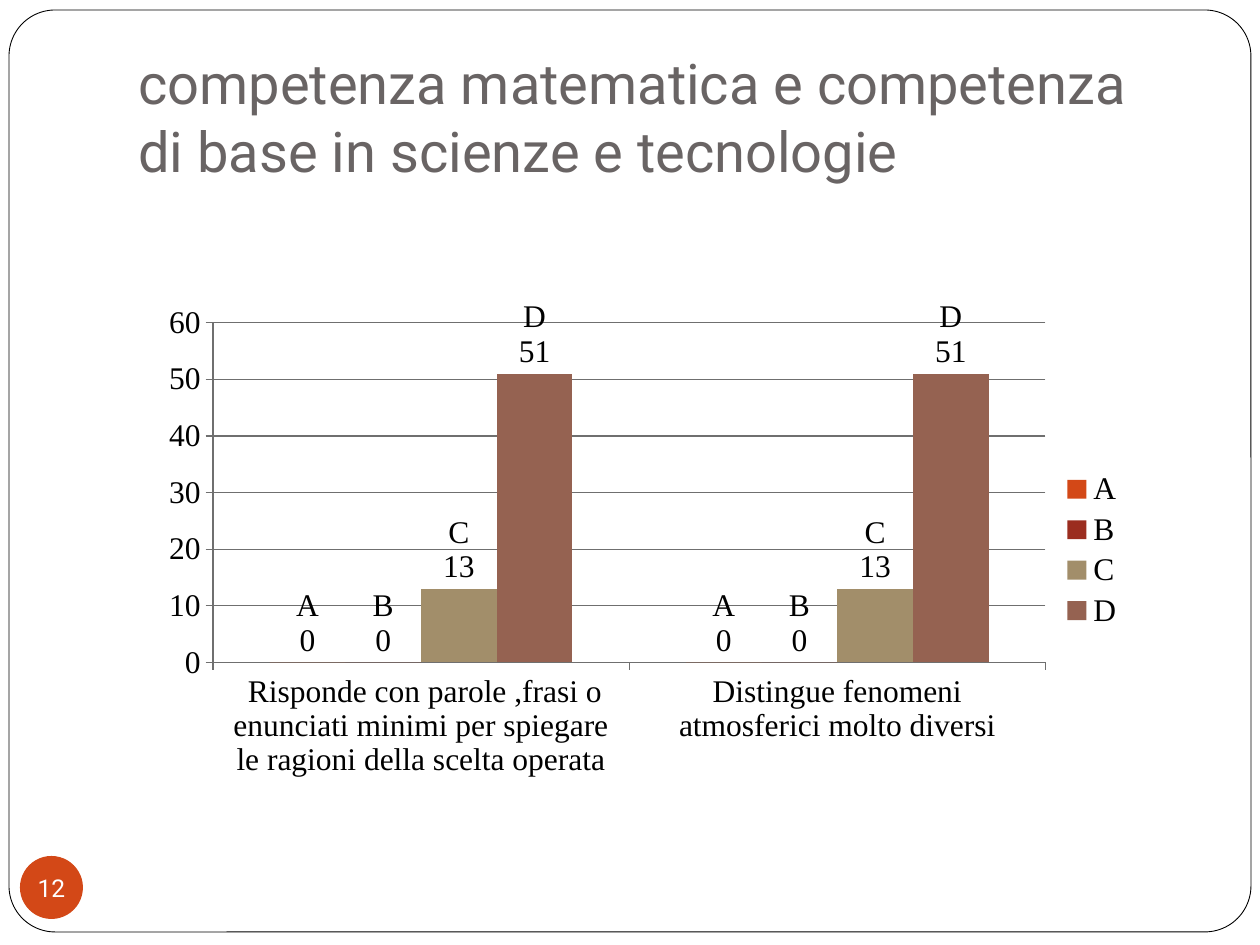
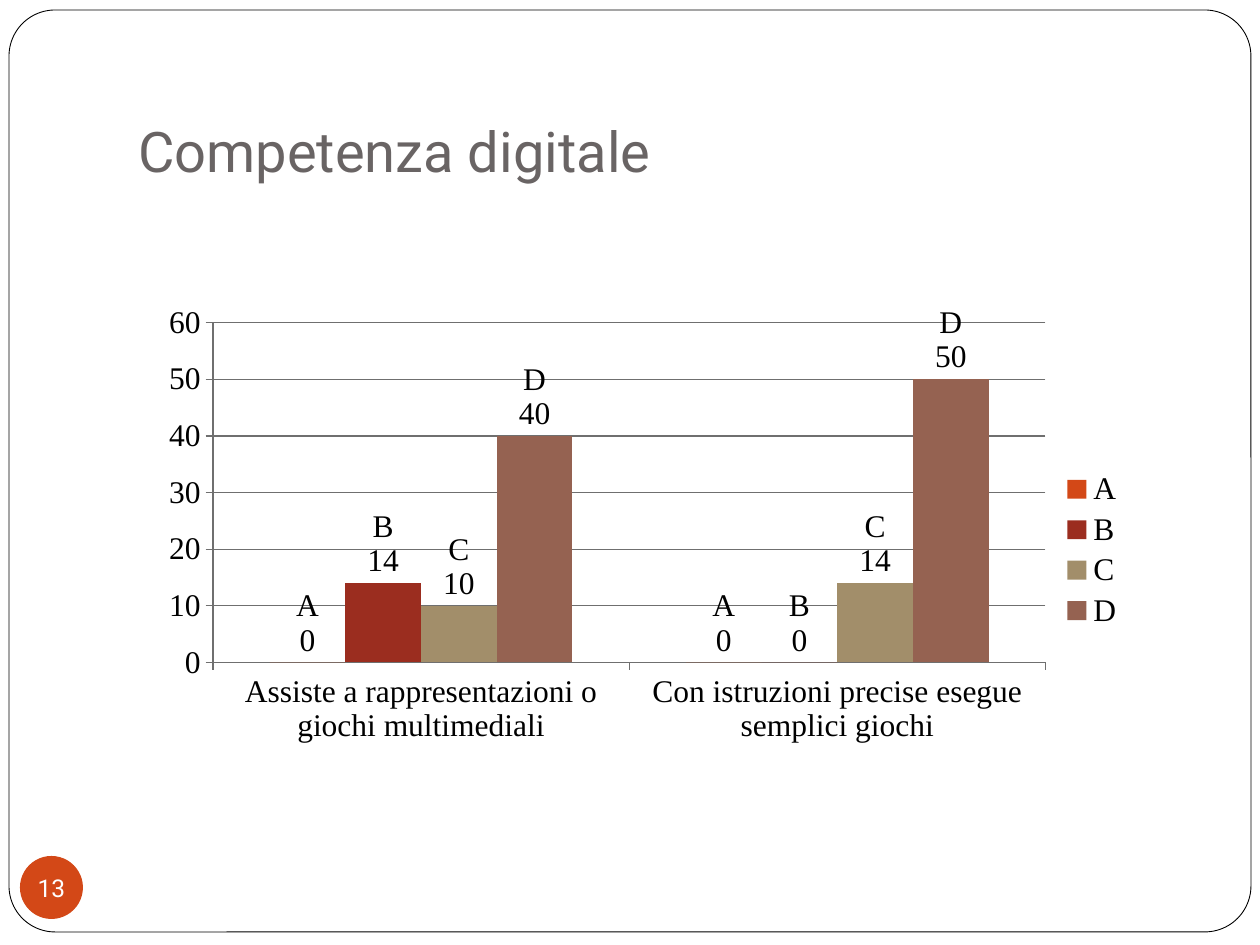
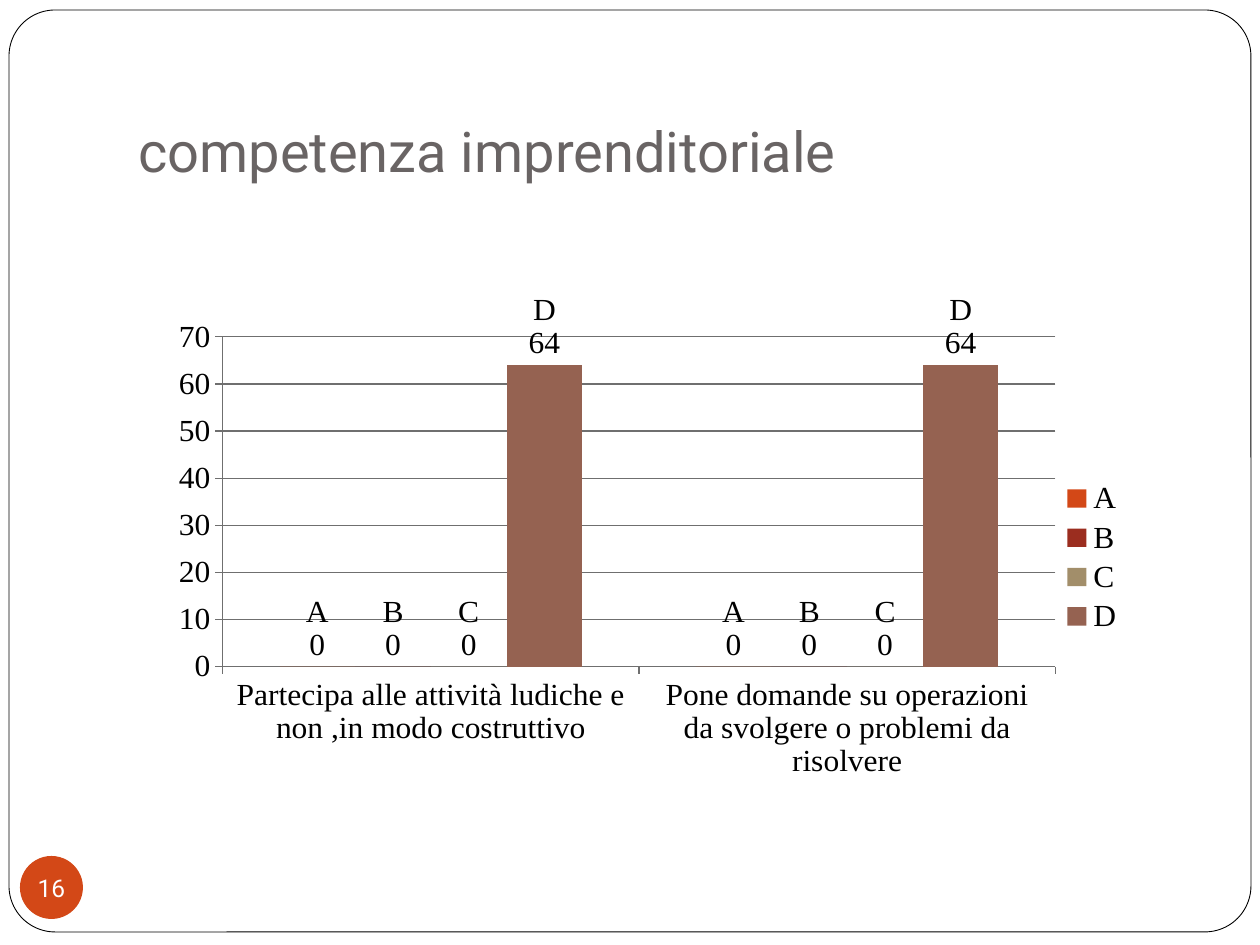
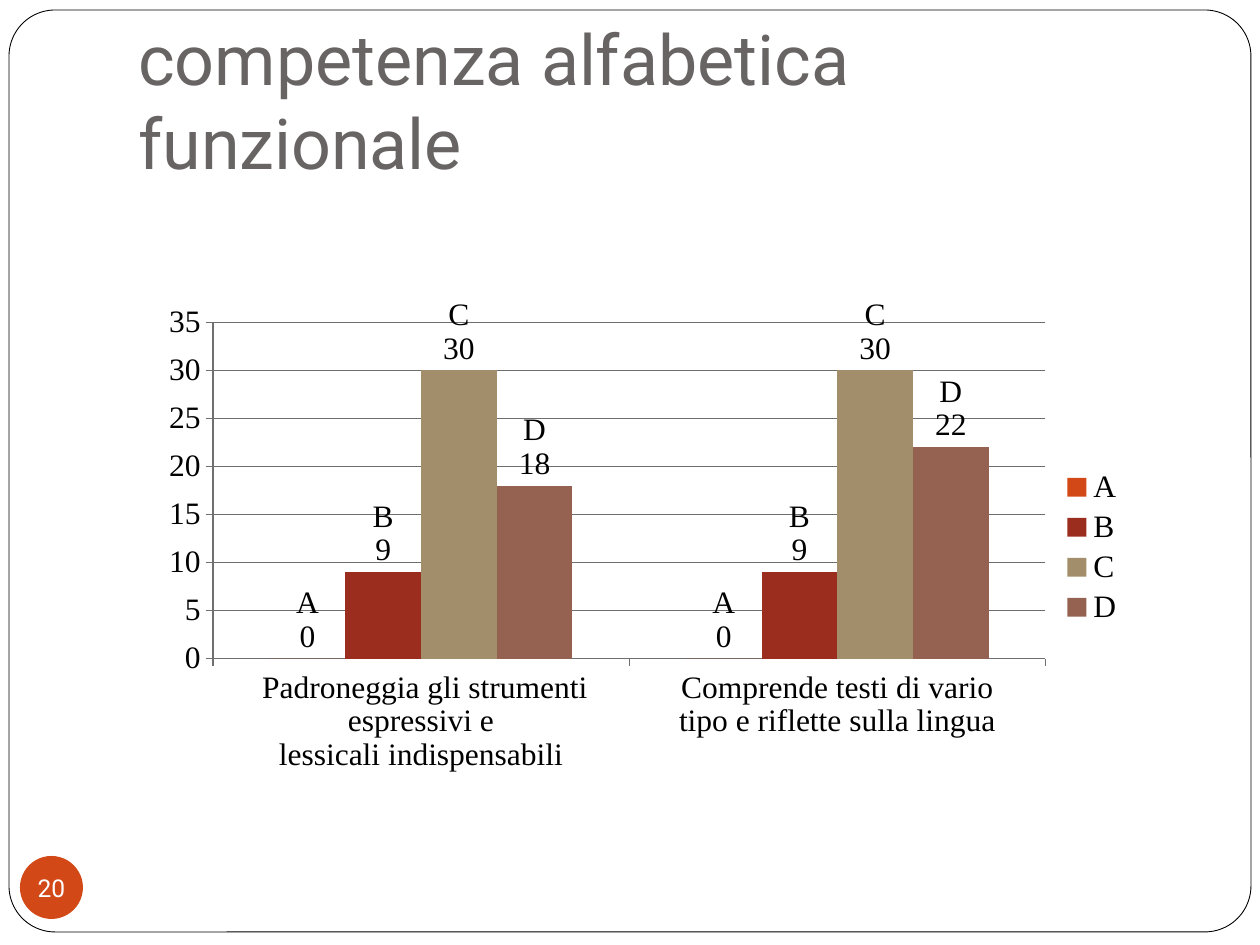
from lxml import etree
from pptx import Presentation
from pptx import util as u
from pptx.chart.data import CategoryChartData
from pptx.dml.color import RGBColor
from pptx.enum import chart as charts, shapes, text
from pptx.oxml.ns import qn

# Shared look
EMU_PER_PX = 914400 / 126
WHITE, BLACK, TITLE_GREY, GRID_GREY, ORANGE = "FFFFFF", "000000", "696464", "6F6F6F", "D34817"
LEVEL_COLORS = {"A": ORANGE, "B": "9B2D1F", "C": "A28E6A", "D": "956251"}
HEADING_FONT, CHART_FONT = "Roboto", "Times New Roman"

# Number, title, title size, plot left share, categories, counts for each level
SLIDES = [
    (12, "competenza matematica e competenza di base in scienze e tecnologie", 32, 0.06,
     [" Risponde con parole ,frasi o enunciati minimi per spiegare le ragioni della scelta operata",
      "Distingue fenomeni atmosferici molto diversi"],
     {"A": (0, 0), "B": (0, 0), "C": (13, 13), "D": (51, 51)}),
    (13, "Competenza digitale", 32, 0.06,
     ["Assiste a rappresentazioni o giochi multimediali",
      "Con istruzioni precise esegue semplici giochi"],
     {"A": (0, 0), "B": (14, 0), "C": (10, 14), "D": (40, 50)}),
    (16, "competenza imprenditoriale", 32, 0.07,
     ["Partecipa alle attività ludiche e non ,in modo costruttivo",
      "Pone domande su operazioni da svolgere o problemi da risolvere"],
     {"A": (0, 0), "B": (0, 0), "C": (0, 0), "D": (64, 64)}),
    (20, "competenza alfabetica funzionale", 40, 0.06,
     [" Padroneggia gli strumenti espressivi e\nlessicali indispensabili\n",
      "Comprende testi di vario\ntipo e riflette sulla lingua\n"],
     {"A": (0, 0), "B": (9, 9), "C": (30, 30), "D": (18, 22)}),
]


def px(*lengths):
    return [u.Emu(round(length * EMU_PER_PX)) for length in lengths]


def color(hex_string):
    return RGBColor.from_string(hex_string)


def set_all(target, values):
    for name, value in values.items():
        setattr(target, name, value)


def style_font(font, name, size, hex_string):
    set_all(font, {"name": name, "size": u.Pt(size)})
    font.color.rgb = color(hex_string)


def add_panel(slide, kind, box, fill, line=None):
    panel = slide.shapes.add_shape(kind, *px(*box))
    panel.shadow.inherit = False
    panel.fill.solid()
    panel.fill.fore_color.rgb = color(fill)
    if line:
        panel.line.color.rgb = color(line)
        panel.line.width = u.Pt(0.5)
    else:
        panel.line.fill.background()
    return panel


def write(shape, words, size, hex_string, align, frame_format, margins):
    frame = shape.text_frame
    set_all(frame, frame_format)
    sides = ("margin_left", "margin_top", "margin_right", "margin_bottom")
    set_all(frame, dict(zip(sides, map(u.Inches, margins))))
    paragraph = frame.paragraphs[0]
    paragraph.alignment = align
    run = paragraph.add_run()
    run.text = words
    style_font(run.font, HEADING_FONT, size, hex_string)


def add_frame(slide):
    frame = add_panel(slide, shapes.MSO_SHAPE.ROUNDED_RECTANGLE, (9, 10, 1242, 922), WHITE, BLACK)
    frame.adjustments[0] = 0.05


def add_title(slide, words, size):
    title = slide.shapes.add_textbox(*px(126, 38, 1071, 158))
    write(title, words, size, TITLE_GREY, text.PP_ALIGN.LEFT,
          {"word_wrap": True, "vertical_anchor": text.MSO_ANCHOR.BOTTOM}, (0.1, 0.05, 0.1, 0.1))


def add_badge(slide, number):
    badge = add_panel(slide, shapes.MSO_SHAPE.OVAL, (20, 856, 63, 63), ORANGE)
    write(badge, str(number), 14, WHITE, text.PP_ALIGN.CENTER,
          {"word_wrap": False, "vertical_anchor": text.MSO_ANCHOR.MIDDLE}, (0, 0, 0, 0))


def place_plot(chart, left):
    """Fix the inner plot area as shares of the chart."""
    area = chart._chartSpace.chart.plotArea
    for old in area.findall(qn("c:layout")):
        area.remove(old)
    layout = etree.Element(qn("c:layout"))
    manual = etree.SubElement(layout, qn("c:manualLayout"))
    settings = {"layoutTarget": "inner", "xMode": "edge", "yMode": "edge",
                "x": left, "y": 0.056, "w": 0.847, "h": 0.664}
    for tag, value in settings.items():
        etree.SubElement(manual, qn("c:" + tag)).set("val", str(value))
    area.insert(0, layout)


def label_series(series):
    """Show the level above its count on top of each column."""
    labels = series.data_labels
    set_all(labels, {"show_value": True, "show_series_name": True,
                     "position": charts.XL_LABEL_POSITION.OUTSIDE_END})
    style_font(labels.font, CHART_FONT, 18, BLACK)
    separator = etree.Element(qn("c:separator"))
    separator.text = "\n"
    labels._element.find(qn("c:showBubbleSize")).addnext(separator)


def add_level_chart(slide, categories, counts, plot_left):
    data = CategoryChartData()
    data.categories = categories
    for level, values in counts.items():
        data.add_series(level, values)
    chart = slide.shapes.add_chart(charts.XL_CHART_TYPE.COLUMN_CLUSTERED,
                                   *px(154, 294, 983, 512), data).chart
    set_all(chart, {"has_title": False, "has_legend": True})
    style_font(chart.font, CHART_FONT, 18, BLACK)
    set_all(chart.legend, {"position": charts.XL_LEGEND_POSITION.RIGHT, "include_in_layout": False})
    place_plot(chart, plot_left)

    # Axes and gridlines
    chart.value_axis.has_major_gridlines = True
    for axis in (chart.category_axis, chart.value_axis):
        axis.major_tick_mark = charts.XL_TICK_MARK.OUTSIDE
    for ruled in (chart.category_axis, chart.value_axis, chart.value_axis.major_gridlines):
        ruled.format.line.color.rgb = color(GRID_GREY)
        ruled.format.line.width = u.Pt(0.75)

    # Columns
    columns = chart.plots[0]
    set_all(columns, {"gap_width": 150, "overlap": 0, "vary_by_categories": False})
    for series in columns.series:
        series.format.fill.solid()
        series.format.fill.fore_color.rgb = color(LEVEL_COLORS[series.name])
        label_series(series)


def main():
    deck = Presentation()
    deck.slide_width, deck.slide_height = px(1260, 945)
    for number, title, size, plot_left, categories, counts in SLIDES:
        slide = deck.slides.add_slide(deck.slide_layouts[6])
        add_frame(slide)
        add_title(slide, title, size)
        add_badge(slide, number)
        add_level_chart(slide, categories, counts, plot_left)
    deck.save("out.pptx")


if __name__ == "__main__":
    main()
